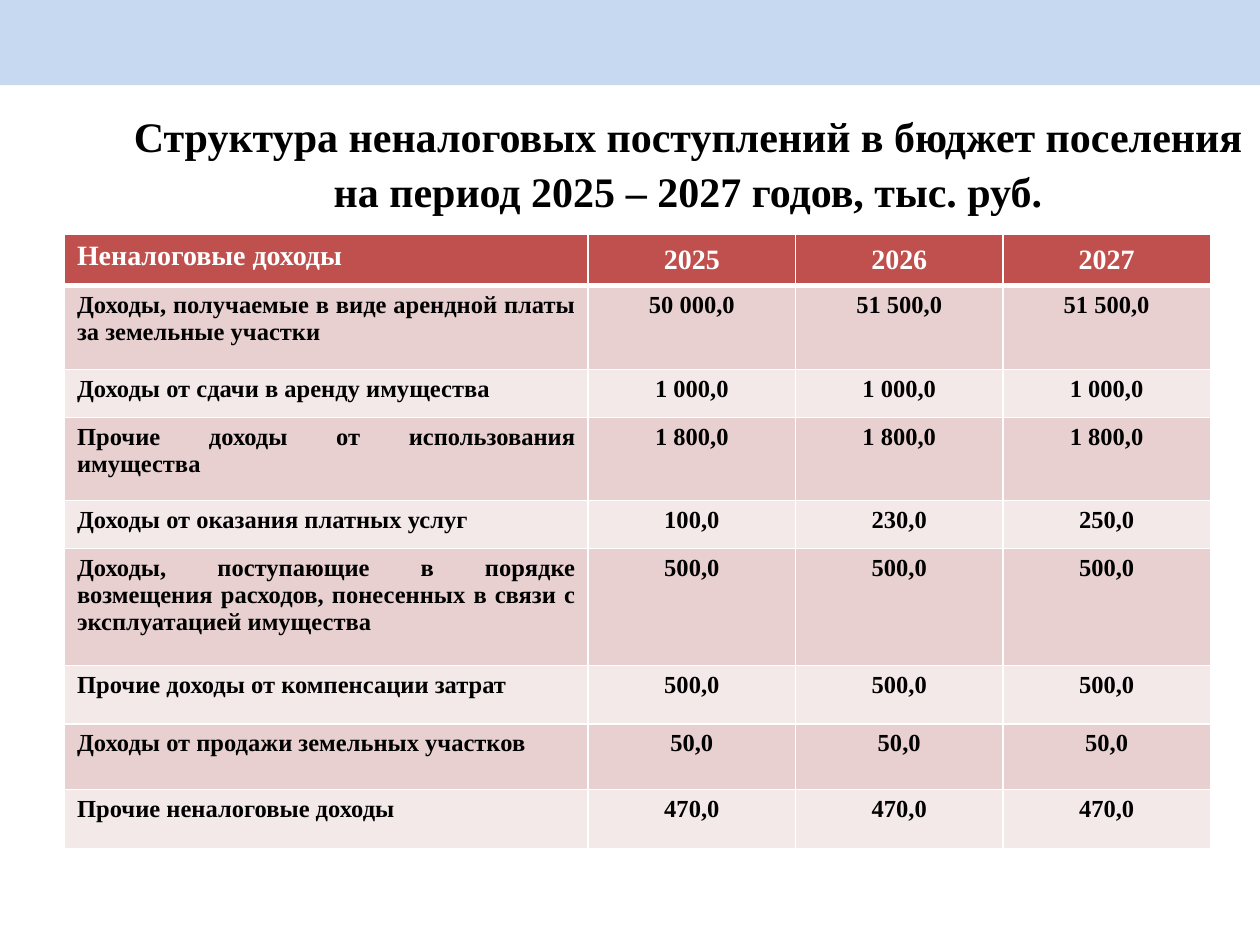
from lxml import etree
from pptx import Presentation
from pptx.dml.color import RGBColor
from pptx.enum.shapes import MSO_SHAPE
from pptx.enum.text import MSO_ANCHOR, PP_ALIGN
from pptx.oxml.ns import qn
from pptx.util import Cm, Pt

RECT = MSO_SHAPE.RECTANGLE
TOP, MIDDLE = MSO_ANCHOR.TOP, MSO_ANCHOR.MIDDLE
LEFT, CENTER, JUSTIFY = PP_ALIGN.LEFT, PP_ALIGN.CENTER, PP_ALIGN.JUSTIFY

FONT = "Times New Roman"
WHITE, BLACK = "FFFFFF", "000000"
BAND, HEADER = "C6D9F1", "C0504D"
ROW_FILLS = ("E8D0D0", "F4E9E9")

TITLE = "Структура неналоговых поступлений в бюджет поселения на период 2025 – 2027 годов, тыс. руб."
INCOME = [
    ("Неналоговые доходы", "2025", "2026", "2027"),
    ("Доходы, получаемые в виде арендной платы за земельные участки",
     "50 000,0", "51 500,0", "51 500,0"),
    ("Доходы от сдачи в аренду имущества", "1 000,0", "1 000,0", "1 000,0"),
    ("Прочие доходы от использования имущества", "1 800,0", "1 800,0", "1 800,0"),
    ("Доходы от оказания платных услуг", "100,0", "230,0", "250,0"),
    ("Доходы, поступающие в порядке возмещения расходов, понесенных в связи "
     "с эксплуатацией имущества", "500,0", "500,0", "500,0"),
    ("Прочие доходы от компенсации затрат", "500,0", "500,0", "500,0"),
    ("Доходы от продажи земельных участков", "50,0", "50,0", "50,0"),
    ("Прочие неналоговые доходы", "470,0", "470,0", "470,0"),
]
ROW_HEIGHTS = (1.03, 1.69, 0.97, 1.67, 0.97, 2.36, 1.17, 1.33, 1.19)
NAME_SHARE = 0.457


def rgb(color):
    return RGBColor.from_string(color)


def write(tf, text, size=14, color=BLACK, align=LEFT, spacing=None):
    p = tf.paragraphs[0]
    p.alignment = align
    p.line_spacing = spacing
    r = p.add_run()
    r.text = text
    r.font.name = FONT
    r.font.size = Pt(size)
    r.font.bold = True
    r.font.color.rgb = rgb(color)


def set_borders(cell, top=1, bottom=1):
    """Draw white borders, widths in points; call before the cell is filled."""
    tc_pr = cell._tc.get_or_add_tcPr()
    for side, width in (("L", 1), ("R", 1), ("T", top), ("B", bottom)):
        ln = etree.SubElement(tc_pr, qn(f"a:ln{side}"), w=str(Pt(width)))
        fill = etree.SubElement(ln, qn("a:solidFill"))
        etree.SubElement(fill, qn("a:srgbClr"), val=WHITE)


def add_band(s, x, y, w, h):
    sp = s.shapes.add_shape(RECT, Cm(x), Cm(y), Cm(w), Cm(h))
    sp.shadow.inherit = False
    sp.fill.solid()
    sp.fill.fore_color.rgb = rgb(BAND)
    sp.line.fill.background()


def add_title(s, x, y, w, h):
    tf = s.shapes.add_textbox(Cm(x), Cm(y), Cm(w), Cm(h)).text_frame
    tf.word_wrap = True
    tf.vertical_anchor = MIDDLE
    tf.margin_left = tf.margin_right = Cm(0.2)
    write(tf, TITLE, size=24, align=CENTER, spacing=1.1)


def add_income_table(s, x, y, w):
    table = s.shapes.add_table(len(INCOME), len(INCOME[0]), Cm(x), Cm(y),
                               Cm(w), Cm(sum(ROW_HEIGHTS))).table
    year_width = w * (1 - NAME_SHARE) / (len(INCOME[0]) - 1)
    for j, column in enumerate(table.columns):
        column.width = Cm(year_width if j else w * NAME_SHARE)
    for i, (values, height) in enumerate(zip(INCOME, ROW_HEIGHTS)):
        table.rows[i].height = Cm(height)
        is_header = i == 0
        for j, text in enumerate(values):
            cell = table.cell(i, j)
            set_borders(cell, top=3 if i == 1 else 1, bottom=3 if is_header else 1)
            cell.fill.solid()
            cell.fill.fore_color.rgb = rgb(HEADER if is_header else ROW_FILLS[(i - 1) % 2])
            cell.vertical_anchor = MIDDLE if is_header and j else TOP
            name_align = LEFT if is_header else JUSTIFY
            write(cell.text_frame, text, size=16 if is_header else 14,
                  color=WHITE if is_header else BLACK,
                  align=CENTER if j else name_align)


def main():
    prs = Presentation()
    prs.slide_width, prs.slide_height = Cm(25.4), Cm(19.05)
    s = prs.slides.add_slide(prs.slide_layouts[6])
    add_band(s, 0, 0, 25.4, 1.72)
    add_title(s, 2.44, 2.13, 22.86, 2.21)
    add_income_table(s, 1.3, 4.73, 23.1)
    prs.save("out.pptx")


if __name__ == "__main__":
    main()
